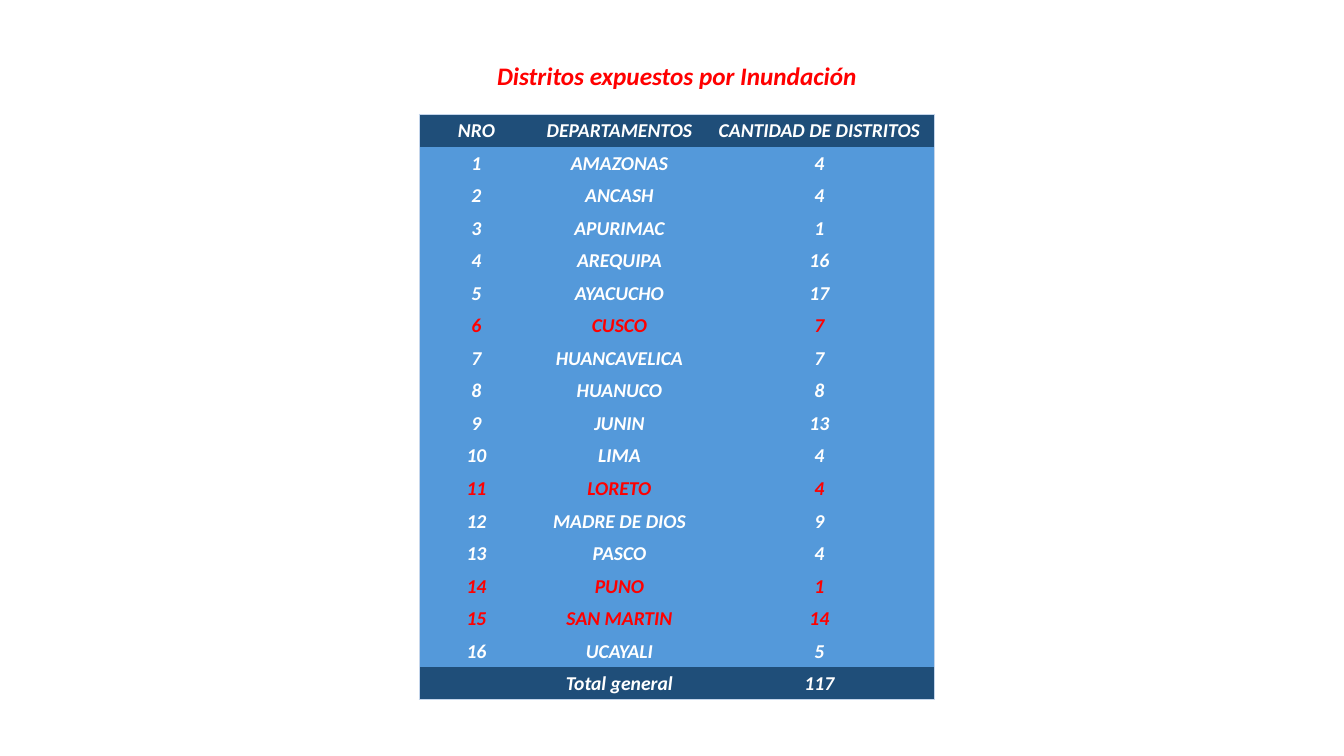
import dataclasses

import lxml.etree
import pptx
import pptx.dml.color
import pptx.enum.text
import pptx.oxml.ns
import pptx.util

EMU_PER_PX = 914400 / 100.8
SLIDE_SIZE = (1344, 756)
TITLE_BOX = (485, 55, 384, 40)
TABLE_BOX = (419, 114, 515, 586)
COLUMN_WIDTHS = (115, 171, 229)

COLORS = {
    "band": "1F4E79",
    "body": "5499DA",
    "text": "FFFFFF",
    "highlight": "FF0000",
    "frame": "C4D5EB",
}
FONT_FORMAT = {"name": "Calibri", "bold": True, "italic": True}
CELL_FORMAT = {
    "margin_left": pptx.util.Inches(0.01),
    "margin_right": pptx.util.Inches(0.01),
    "margin_top": pptx.util.Inches(0.01),
    "margin_bottom": 0,
    "vertical_anchor": pptx.enum.text.MSO_ANCHOR.MIDDLE,
}


@dataclasses.dataclass(frozen=True)
class TableRow:
    number: str
    department: str
    districts: str
    fill: str = "body"
    ink: str = "text"


DEPARTMENTS = (
    ("AMAZONAS", 4), ("ANCASH", 4), ("APURIMAC", 1), ("AREQUIPA", 16),
    ("AYACUCHO", 17), ("CUSCO", 7), ("HUANCAVELICA", 7), ("HUANUCO", 8),
    ("JUNIN", 13), ("LIMA", 4), ("LORETO", 4), ("MADRE DE DIOS", 9),
    ("PASCO", 4), ("PUNO", 1), ("SAN MARTIN", 14), ("UCAYALI", 5),
)
HIGHLIGHTED = {"CUSCO", "LORETO", "PUNO", "SAN MARTIN"}
ROWS = [
    TableRow("NRO", "DEPARTAMENTOS", "CANTIDAD DE DISTRITOS", fill="band"),
    *(
        TableRow(str(number), name, str(districts),
                 ink="highlight" if name in HIGHLIGHTED else "text")
        for number, (name, districts) in enumerate(DEPARTMENTS, start=1)
    ),
    TableRow("", "Total general", "117", fill="band"),
]


def px(length: float) -> pptx.util.Emu:
    return pptx.util.Emu(round(length * EMU_PER_PX))


def rgb(color: str) -> pptx.dml.color.RGBColor:
    return pptx.dml.color.RGBColor.from_string(COLORS[color])


def write_centered(text_frame, text: str, size: int, color: str) -> None:
    paragraph = text_frame.paragraphs[0]
    paragraph.alignment = pptx.enum.text.PP_ALIGN.CENTER
    run = paragraph.add_run()
    run.text = text
    for attribute, value in FONT_FORMAT.items():
        setattr(run.font, attribute, value)
    run.font.size = pptx.util.Pt(size)
    run.font.color.rgb = rgb(color)


def set_borders(cell, framed: dict[str, bool]) -> None:
    """Draw the framed edges and clear the others; keys are in schema order."""
    qn = pptx.oxml.ns.qn
    properties = cell._tc.get_or_add_tcPr()
    for position, (edge, visible) in enumerate(framed.items()):
        line = lxml.etree.Element(qn(f"a:ln{edge}"), w=str(pptx.util.Pt(0.5)))
        if visible:
            fill = lxml.etree.SubElement(line, qn("a:solidFill"))
            lxml.etree.SubElement(fill, qn("a:srgbClr"), val=COLORS["frame"])
        else:
            lxml.etree.SubElement(line, qn("a:noFill"))
        properties.insert(position, line)


def add_title(slide) -> None:
    title = slide.shapes.add_textbox(*map(px, TITLE_BOX))
    title.text_frame.word_wrap = False
    title.text_frame.auto_size = pptx.enum.text.MSO_AUTO_SIZE.SHAPE_TO_FIT_TEXT
    write_centered(title.text_frame, "Distritos expuestos por Inundación", 18, "highlight")


def add_district_table(slide) -> None:
    last_row, last_column = len(ROWS) - 1, len(COLUMN_WIDTHS) - 1
    table = slide.shapes.add_table(
        len(ROWS), len(COLUMN_WIDTHS), *map(px, TABLE_BOX)
    ).table
    table.first_row = table.horz_banding = False
    for column, width in zip(table.columns, COLUMN_WIDTHS):
        column.width = px(width)
    for r, row in enumerate(ROWS):
        table.rows[r].height = px(TABLE_BOX[3] / len(ROWS))
        for c, text in enumerate((row.number, row.department, row.districts)):
            cell = table.cell(r, c)
            for attribute, value in CELL_FORMAT.items():
                setattr(cell, attribute, value)
            cell.fill.solid()
            cell.fill.fore_color.rgb = rgb(row.fill)
            write_centered(cell.text_frame, text, 14, row.ink)
            set_borders(cell, {
                "L": c == 0, "R": c == last_column,
                "T": r == 0, "B": r == last_row,
            })


def main() -> None:
    presentation = pptx.Presentation()
    presentation.slide_width, presentation.slide_height = map(px, SLIDE_SIZE)
    slide = presentation.slides.add_slide(presentation.slide_layouts[6])
    add_title(slide)
    add_district_table(slide)
    presentation.save("out.pptx")


if __name__ == "__main__":
    main()
